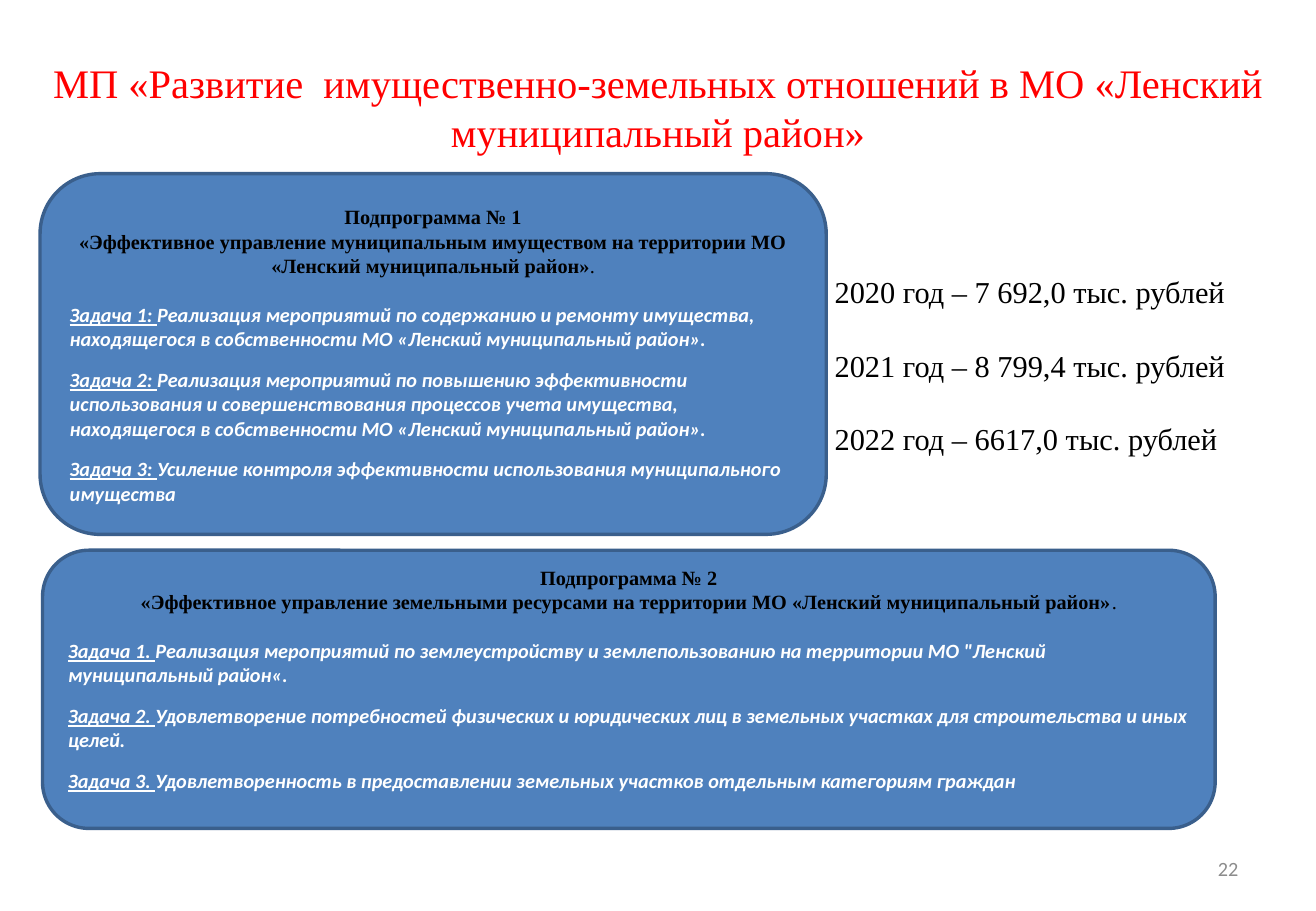
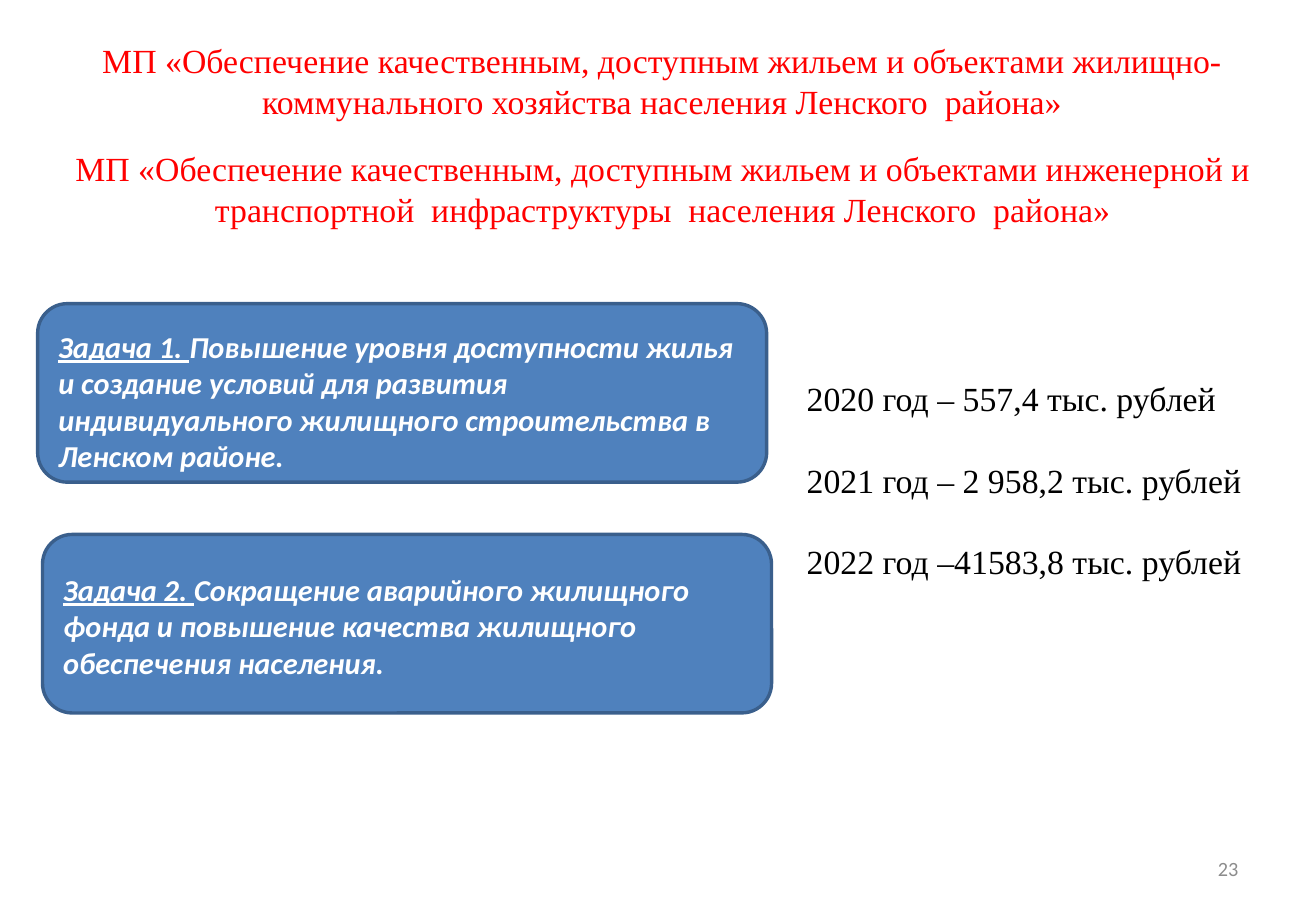
from dataclasses import dataclass

import pptx
import pptx.dml.color
import pptx.enum.shapes
import pptx.enum.text
import pptx.util

Inches = pptx.util.Inches
Pt = pptx.util.Pt
ALIGN = pptx.enum.text.PP_ALIGN
ANCHOR = pptx.enum.text.MSO_ANCHOR

COLORS = {
    "title": "FF0000",
    "text": "000000",
    "task": "FFFFFF",
    "panel": "4F81BD",
    "panel_line": "3A5F8C",
    "page": "8C8C8C",
}
SERIF = "Times New Roman"
SANS = "Calibri"
TITLE_ONLY = 5


@dataclass
class Box:
    left: float
    top: float
    width: float
    height: float

    def lengths(self) -> tuple:
        return tuple(Inches(v) for v in (self.left, self.top, self.width, self.height))


@dataclass
class Title:
    text: str
    box: Box


@dataclass
class Panel:
    box: Box
    inset: float
    size: int
    tasks: list[tuple[str, str]]
    heading: tuple[str, ...] = ()


@dataclass
class Page:
    number: int
    title_size: int
    titles: list[Title]
    budget_box: Box
    budget_size: int
    budget: list[str]
    panels: list[Panel]


PAGES = [
    Page(
        22, 24,
        [Title("МП «Развитие  имущественно-земельных отношений в МО «Ленский муниципальный район»",
               Box(0.25, 0.43, 10.33, 0.91))],
        Box(6.77, 2.2, 3.65, 1.65), 18,
        ["2020 год – 7 692,0 тыс. рублей",
         "2021 год – 8 799,4 тыс. рублей",
         "2022 год – 6617,0 тыс. рублей"],
        [Panel(
            Box(0.33, 1.43, 6.47, 2.97), 0.11, 12,
            [("Задача 1: ", "Реализация мероприятий по содержанию и ремонту имущества, "
              "находящегося в собственности МО «Ленский муниципальный район»."),
             ("Задача 2: ", "Реализация мероприятий по повышению эффективности использования "
              "и совершенствования процессов учета имущества, находящегося в собственности "
              "МО «Ленский муниципальный район»."),
             ("Задача 3: ", "Усиление контроля эффективности использования "
              "муниципального имущества")],
            ("Подпрограмма № 1",
             "«Эффективное управление муниципальным имуществом на территории "
             "МО «Ленский муниципальный район»")),
         Panel(
            Box(0.35, 4.53, 9.65, 2.29), 0.01, 12,
            [("Задача 1. ", "Реализация мероприятий по землеустройству и землепользованию "
              "на территории МО \"Ленский муниципальный район«."),
             ("Задача 2. ", "Удовлетворение потребностей физических и юридических лиц "
              "в земельных участках для строительства и иных целей."),
             ("Задача 3. ", "Удовлетворенность в предоставлении земельных участков "
              "отдельным категориям граждан")],
            ("Подпрограмма № 2",
             "«Эффективное управление земельными ресурсами на территории "
             "МО «Ленский муниципальный район»"))],
    ),
    Page(
        23, 20,
        [Title("МП «Обеспечение качественным, доступным жильем и объектами "
               "жилищно-коммунального хозяйства населения Ленского  района»",
               Box(0.26, 0.28, 10.38, 0.77)),
         Title("МП «Обеспечение качественным, доступным жильем и объектами инженерной и "
               "транспортной  инфраструктуры  населения Ленского  района»",
               Box(0.26, 1.17, 10.39, 0.77))],
        Box(6.54, 3.06, 3.83, 1.78), 20,
        ["2020 год – 557,4 тыс. рублей",
         "2021 год – 2 958,2 тыс. рублей",
         "2022 год –41583,8 тыс. рублей"],
        [Panel(
            Box(0.31, 2.5, 6, 1.47), 0.13, 18,
            [("Задача 1. ", "Повышение уровня доступности жилья и создание условий для "
              "развития индивидуального жилищного строительства в Ленском районе.")]),
         Panel(
            Box(0.35, 4.4, 6, 1.47), 0.23, 18,
            [("Задача 2. ", "Сокращение аварийного жилищного фонда и повышение качества "
              "жилищного обеспечения населения.")])],
    ),
]


def rgb(name: str) -> pptx.dml.color.RGBColor:
    return pptx.dml.color.RGBColor.from_string(COLORS[name])


def style(paragraph, size: float, color: str, font: str = SERIF,
          align=ALIGN.LEFT, gap: float = 0) -> None:
    """Format a whole paragraph; gap is the space before it in points."""
    paragraph.font.size = Pt(size)
    paragraph.font.name = font
    paragraph.font.color.rgb = rgb(color)
    paragraph.alignment = align
    paragraph.space_before = Pt(gap)


def prepare(frame, anchor=ANCHOR.TOP, inset: float = 0.05) -> None:
    frame.word_wrap = True
    frame.auto_size = pptx.enum.text.MSO_AUTO_SIZE.NONE
    frame.vertical_anchor = anchor
    frame.margin_left = frame.margin_right = Inches(0.1)
    frame.margin_top, frame.margin_bottom = Inches(inset), Inches(0)


def next_paragraph(frame):
    """Return the unused first paragraph, or else a new one."""
    first = frame.paragraphs[0]
    return frame.add_paragraph() if first.runs else first


def add_titles(slide, page: Page) -> None:
    for index, title in enumerate(page.titles):
        if index == 0:
            heading = slide.shapes.title
            heading.left, heading.top, heading.width, heading.height = title.box.lengths()
        else:
            heading = slide.shapes.add_textbox(*title.box.lengths())
        prepare(heading.text_frame)
        heading.text_frame.text = title.text
        style(heading.text_frame.paragraphs[0], page.title_size, "title", align=ALIGN.CENTER)


def add_budget(slide, page: Page) -> None:
    frame = slide.shapes.add_textbox(*page.budget_box.lengths()).text_frame
    prepare(frame)
    for index, year in enumerate(page.budget):
        paragraph = next_paragraph(frame)
        paragraph.add_run().text = year
        style(paragraph, page.budget_size, "text", gap=1.22 * page.budget_size if index else 0)


def add_panel(slide, panel: Panel) -> None:
    shape = slide.shapes.add_shape(
        pptx.enum.shapes.MSO_SHAPE.ROUNDED_RECTANGLE, *panel.box.lengths())
    shape.shadow.inherit = False
    shape.fill.solid()
    shape.fill.fore_color.rgb = rgb("panel")
    shape.line.color.rgb = rgb("panel_line")
    shape.line.width = Pt(2)
    frame = shape.text_frame
    prepare(frame, inset=panel.inset)

    for line in panel.heading:
        paragraph = next_paragraph(frame)
        run = paragraph.add_run()
        run.text = line
        run.font.bold = True
        style(paragraph, panel.size, "text", align=ALIGN.CENTER)
    if panel.heading:
        paragraph.add_run().text = "."

    for index, (label, goal) in enumerate(panel.tasks):
        paragraph = next_paragraph(frame)
        label_run = paragraph.add_run()
        label_run.text = label
        label_run.font.underline = True
        paragraph.add_run().text = goal
        gap = 9.75 if index else 14.65 if panel.heading else 0
        style(paragraph, panel.size, "task", SANS, gap=gap)
        paragraph.font.bold = paragraph.font.italic = True


def add_page_number(slide, number: int) -> None:
    frame = slide.shapes.add_textbox(*Box(7.76, 6.95, 2.53, 0.4).lengths()).text_frame
    prepare(frame, ANCHOR.MIDDLE, 0)
    frame.text = str(number)
    style(frame.paragraphs[0], 12, "page", SANS, ALIGN.RIGHT)


def main() -> None:
    deck = pptx.Presentation()
    deck.slide_width, deck.slide_height = Inches(10.83), Inches(7.5)
    for page in PAGES:
        slide = deck.slides.add_slide(deck.slide_layouts[TITLE_ONLY])
        add_page_number(slide, page.number)
        add_titles(slide, page)
        add_budget(slide, page)
        for panel in page.panels:
            add_panel(slide, panel)
    deck.save("out.pptx")


if __name__ == "__main__":
    main()
